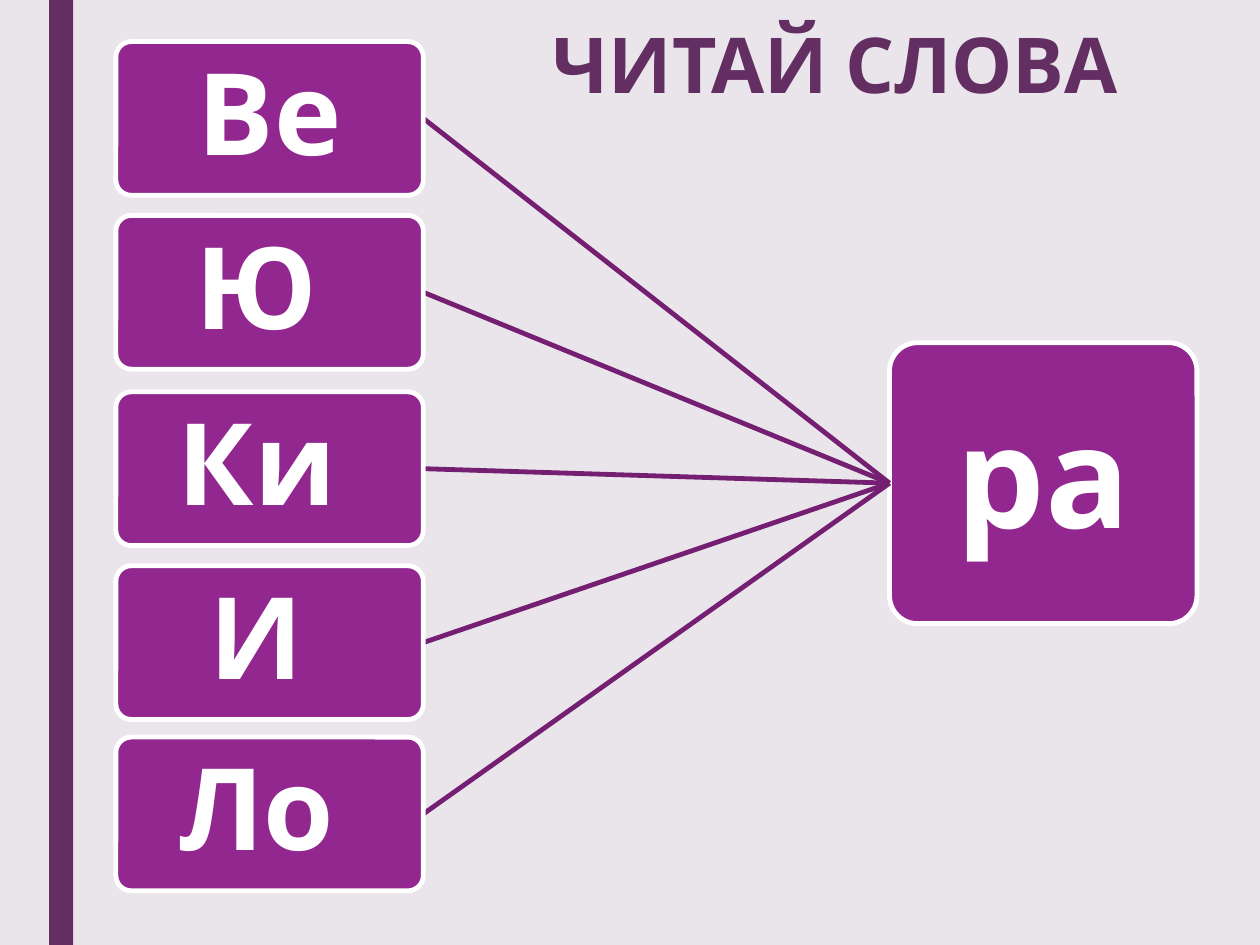
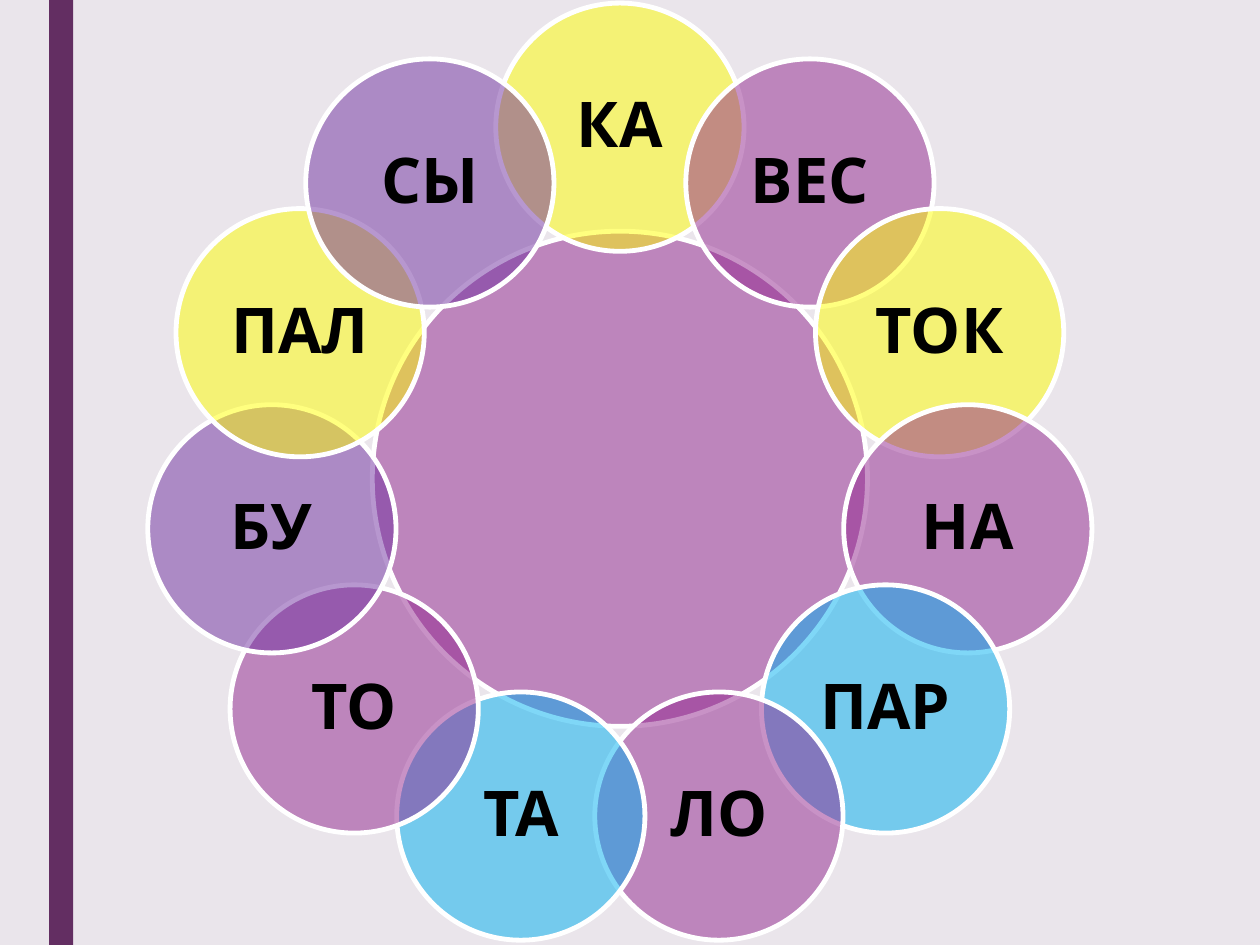
import math
from dataclasses import dataclass

from lxml import etree
from pptx import Presentation
from pptx import util as u
from pptx.dml.color import RGBColor
from pptx.enum import shapes, text
from pptx.oxml import ns

COLORS = {
    "background": "EAE5EB",
    "band": "632E62",
    "purple": "92278F",
    "link": "751F73",
    "yellow": "FFFF00",
    "blue": "00B0F0",
    "violet": "7030A0",
    "white": "FFFFFF",
    "black": "000000",
}
FONT = "Cabin"
OUTLINE = u.Pt(2.75)
LEFT_SIDE, RIGHT_SIDE = 1, 3


@dataclass(frozen=True)
class Syllable:
    label: str
    top: float


@dataclass(frozen=True)
class Petal:
    label: str
    color: str


SYLLABLES = [
    Syllable("Ве", 0.33),
    Syllable("Ю ", 1.71),
    Syllable("Ки ", 3.11),
    Syllable("И ", 4.49),
    Syllable("Ло ", 5.85),
]
SYLLABLE_LEFT, SYLLABLE_WIDTH, SYLLABLE_HEIGHT = 0.92, 2.44, 1.22

PETALS = [
    Petal("КА", "yellow"),
    Petal("ВЕС", "purple"),
    Petal("ТОК", "yellow"),
    Petal("НА", "purple"),
    Petal("ПАР", "blue"),
    Petal("ЛО", "purple"),
    Petal("ТА", "blue"),
    Petal("ТО", "purple"),
    Petal("БУ", "violet"),
    Petal("ПАЛ", "yellow"),
    Petal("СЫ", "violet"),
]
FLOWER_X, FLOWER_Y, FLOWER_RADIUS = 4.92, 3.8, 2.79
CORE_SIZE, PETAL_SIZE = 3.93, 1.97


def rgb(color: str) -> RGBColor:
    return RGBColor.from_string(COLORS[color])


def write(frame, label: str, size: float, color: str, spacing: float = 0.9) -> None:
    frame.text = label
    frame.word_wrap = True
    paragraph = frame.paragraphs[0]
    paragraph.alignment = text.PP_ALIGN.CENTER
    paragraph.line_spacing = spacing
    font = paragraph.runs[0].font
    font.name, font.size, font.bold = FONT, u.Pt(size), True
    font.color.rgb = rgb(color)


def add_figure(slide, kind, left: float, top: float, width: float, height: float,
               color: str, outlined: bool = True):
    figure = slide.shapes.add_shape(
        kind, u.Inches(left), u.Inches(top), u.Inches(width), u.Inches(height))
    figure.shadow.inherit = False
    figure.fill.solid()
    figure.fill.fore_color.rgb = rgb(color)
    if outlined:
        figure.line.color.rgb = rgb("white")
        figure.line.width = OUTLINE
    else:
        figure.line.fill.background()
    return figure


def label_figure(figure, label: str, size: float, color: str) -> None:
    frame = figure.text_frame
    frame.margin_left = frame.margin_right = u.Inches(0.05)
    frame.margin_top = frame.margin_bottom = u.Inches(0.05)
    frame.vertical_anchor = text.MSO_ANCHOR.MIDDLE
    write(frame, label, size, color)


def add_card(slide, label: str, left: float, top: float, width: float, height: float,
             size: float):
    card = add_figure(slide, shapes.MSO_SHAPE.ROUNDED_RECTANGLE,
                      left, top, width, height, "purple")
    card.adjustments[0] = 0.1
    label_figure(card, label, size, "white")
    return card


def add_circle(slide, center_x: float, center_y: float, size: float, color: str):
    circle = add_figure(slide, shapes.MSO_SHAPE.OVAL, center_x - size / 2,
                        center_y - size / 2, size, size, color)
    fill_color = circle.fill._xPr.find(ns.qn("a:solidFill"))[0]
    etree.SubElement(fill_color, ns.qn("a:alpha"), val="50000")
    return circle


def add_link(slide, ending):
    link = slide.shapes.add_connector(
        shapes.MSO_CONNECTOR.STRAIGHT, ending.left, ending.top, ending.left, ending.top)
    link.line.color.rgb = rgb("link")
    link.line.width = OUTLINE
    etree.SubElement(link._element.spPr, ns.qn("a:effectLst"))
    link.begin_connect(ending, LEFT_SIDE)
    return link


def add_banded_slide(deck):
    slide = deck.slides.add_slide(deck.slide_layouts[6])
    add_figure(slide, shapes.MSO_SHAPE.RECTANGLE, 0.39, 0, 0.19, 7.5, "band", False)
    return slide


def build_word_slide(deck) -> None:
    slide = add_banded_slide(deck)
    ending = add_card(slide, "ра", 7.06, 2.72, 2.44, 2.23, 80)
    for syllable in SYLLABLES:
        link = add_link(slide, ending)
        beginning = add_card(slide, syllable.label, SYLLABLE_LEFT, syllable.top,
                             SYLLABLE_WIDTH, SYLLABLE_HEIGHT, 65)
        link.end_connect(beginning, RIGHT_SIDE)
    title = slide.shapes.add_textbox(
        u.Inches(3.67), u.Inches(0.17), u.Inches(5.92), u.Inches(1))
    write(title.text_frame, "ЧИТАЙ СЛОВА", 44, "band", 0.89)


def build_flower_slide(deck) -> None:
    slide = add_banded_slide(deck)
    add_circle(slide, FLOWER_X, FLOWER_Y, CORE_SIZE, "purple")
    for index, petal in enumerate(PETALS):
        angle = math.tau * index / len(PETALS)
        circle = add_circle(slide, FLOWER_X + FLOWER_RADIUS * math.sin(angle),
                            FLOWER_Y - FLOWER_RADIUS * math.cos(angle),
                            PETAL_SIZE, petal.color)
        label_figure(circle, petal.label, 36, "black")


def main() -> None:
    deck = Presentation()
    deck.slide_width, deck.slide_height = u.Inches(10), u.Inches(7.5)
    background = deck.slide_master.background.fill
    background.solid()
    background.fore_color.rgb = rgb("background")
    build_word_slide(deck)
    build_flower_slide(deck)
    deck.save("out.pptx")


if __name__ == "__main__":
    main()
